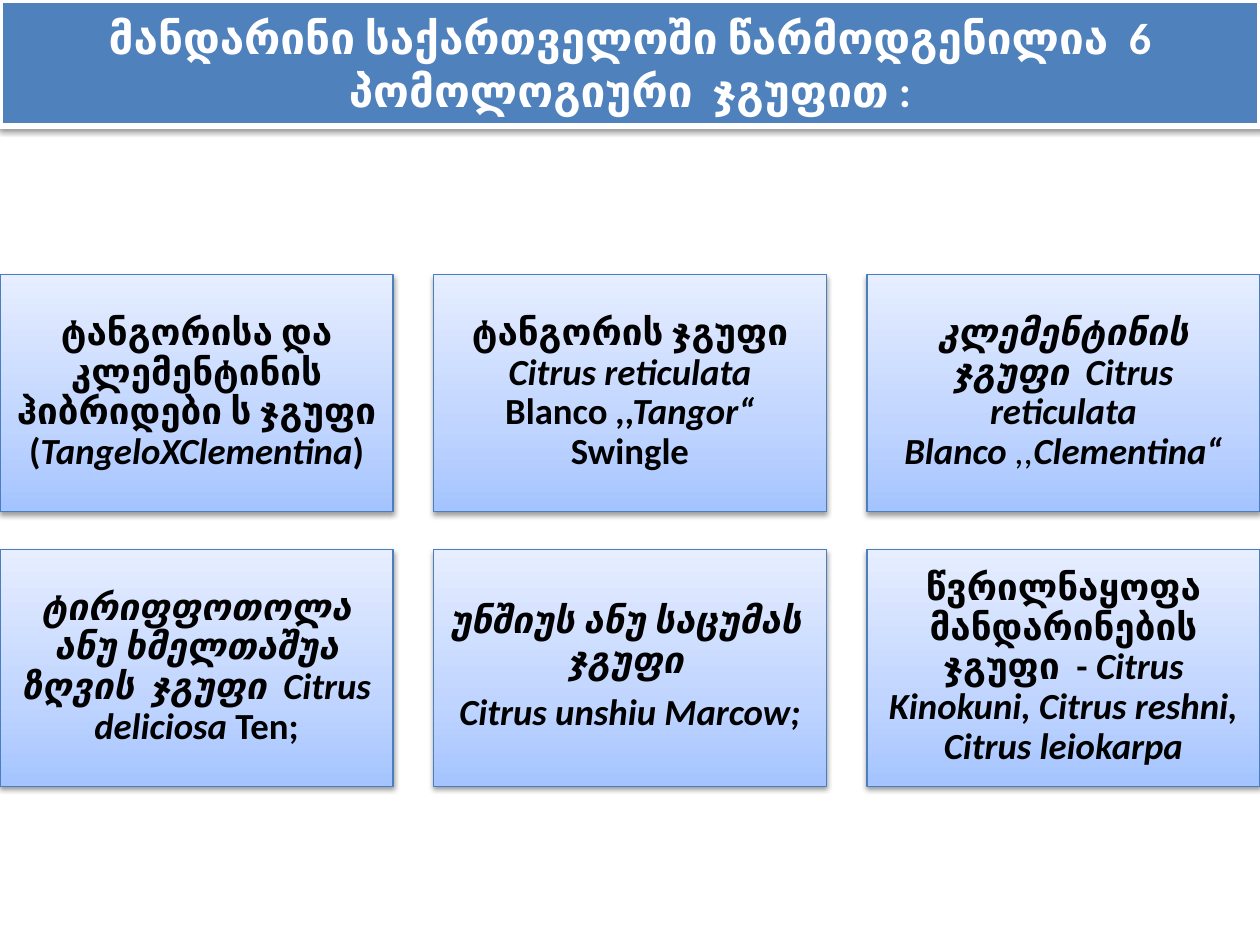
"""Builds a slide listing the six pomological groups of mandarin in Georgia."""
from copy import deepcopy

from lxml import etree
from pptx import Presentation
from pptx.dml.color import RGBColor
from pptx.enum.shapes import MSO_SHAPE
from pptx.enum.text import MSO_ANCHOR, MSO_AUTO_SIZE, PP_ALIGN
from pptx.oxml.ns import qn
from pptx.util import Inches, Pt

RECTANGLE = MSO_SHAPE.RECTANGLE
MIDDLE = MSO_ANCHOR.MIDDLE
CENTER = PP_ALIGN.CENTER
NO_AUTOFIT = MSO_AUTO_SIZE.NONE

TITLE = "მანდარინი საქართველოში წარმოდგენილია  6 პომოლოგიური  ჯგუფით :"
BOLD, ITALIC, LIGHT = (True, False), (True, True), (False, True)
GROUPS = [
    [[("ტანგორისა და კლემენტინის ჰიბრიდები ს ჯგუფი (", BOLD),
      ("TangeloXClementina", ITALIC), (")", BOLD)]],
    [[("ტანგორის ჯგუფი ", BOLD), ("Citrus reticulata", ITALIC), (" Blanco", BOLD),
      (" ,,Tangor“ ", ITALIC), ("Swingle", BOLD)]],
    [[("კლემენტინის ჯგუფი  Citrus reticulata Blanco", ITALIC),
      (" ,,", LIGHT), ("Clementina“", ITALIC)]],
    [[("ტირიფფოთოლა ანუ ხმელთაშუა ზღვის  ჯგუფი  Citrus deliciosa ", ITALIC),
      ("Ten;", BOLD)]],
    [[("უნშიუს ანუ საცუმას  ჯგუფი ", ITALIC)], [("Citrus unshiu Marcow;", ITALIC)]],
    [[("წვრილნაყოფა მანდარინების ჯგუფი  - ", BOLD),
      ("Citrus Kinokuni, Citrus reshni, Citrus leiokarpa", ITALIC)]],
]
GRADIENT = [(0, "A4C4FF"), (0.35, "BFD4FF"), (1, "E6EEFF")]
FONT = "Calibri"
COLUMNS = 3
CARD_WIDTH, CARD_HEIGHT = 3.12, 1.88
GAP_X, GAP_Y = 0.32, 0.3
GRID_TOP = 2.18
INSET = 0.09


def color(value):
    return RGBColor.from_string(value)


def format_font(font, size, value, bold=True, italic=False):
    font.name, font.size = FONT, Pt(size)
    font.bold, font.italic = bold, italic
    font.color.rgb = color(value)


def set_line(shape, value, width):
    shape.line.color.rgb = color(value)
    shape.line.width = Pt(width)


def add_shadow(shape):
    shape.shadow.inherit = False
    effects = shape._element.spPr.find(qn("a:effectLst"))
    shadow = etree.SubElement(effects, qn("a:outerShdw"), blurRad=str(Pt(3.1)),
                              dist=str(Pt(1.6)), dir="5400000", rotWithShape="0")
    black = etree.SubElement(shadow, qn("a:srgbClr"), val="000000")
    etree.SubElement(black, qn("a:alpha"), val="38000")


def fill_gradient(shape):
    shape.fill.gradient()
    shape.fill.gradient_angle = 90
    stop_list = shape._element.spPr.find(".//" + qn("a:gsLst"))
    stop_list.append(deepcopy(stop_list[0]))
    for stop, (position, value) in zip(shape.fill.gradient_stops, GRADIENT):
        stop.position = position
        stop.color.rgb = color(value)


def add_title(slide):
    title = slide.shapes.title
    title.left, title.top, title.width, title.height = (
        Inches(0), Inches(0), Inches(10), Inches(1))
    title.fill.solid()
    title.fill.fore_color.rgb = color("4F81BD")
    set_line(title, "FFFFFF", 3)
    add_shadow(title)
    frame = title.text_frame
    frame.text = TITLE
    frame.auto_size = NO_AUTOFIT
    frame.vertical_anchor = MIDDLE
    frame.paragraphs[0].alignment = CENTER
    format_font(frame.paragraphs[0].runs[0].font, 25.2, "FFFFFF")


def add_card(slide, index, paragraphs):
    row, column = divmod(index, COLUMNS)
    card = slide.shapes.add_shape(
        RECTANGLE, Inches(column * (CARD_WIDTH + GAP_X)),
        Inches(GRID_TOP + row * (CARD_HEIGHT + GAP_Y)),
        Inches(CARD_WIDTH), Inches(CARD_HEIGHT))
    fill_gradient(card)
    set_line(card, "4B7EBC", 0.75)
    add_shadow(card)
    frame = card.text_frame
    frame.word_wrap = True
    frame.vertical_anchor = MIDDLE
    frame.margin_left = frame.margin_right = Inches(INSET)
    frame.margin_top = frame.margin_bottom = Inches(INSET)
    for number, runs in enumerate(paragraphs):
        paragraph = frame.add_paragraph() if number else frame.paragraphs[0]
        paragraph.alignment = CENTER
        paragraph.line_spacing = 0.9
        paragraph.space_after = Pt(7.35)
        for text, (bold, italic) in runs:
            run = paragraph.add_run()
            run.text = text
            format_font(run.font, 21, "000000", bold, italic)


def main():
    presentation = Presentation()
    presentation.slide_width, presentation.slide_height = Inches(10), Inches(7.5)
    slide = presentation.slides.add_slide(presentation.slide_layouts[5])
    add_title(slide)
    for index, paragraphs in enumerate(GROUPS):
        add_card(slide, index, paragraphs)
    presentation.save("out.pptx")


if __name__ == "__main__":
    main()
